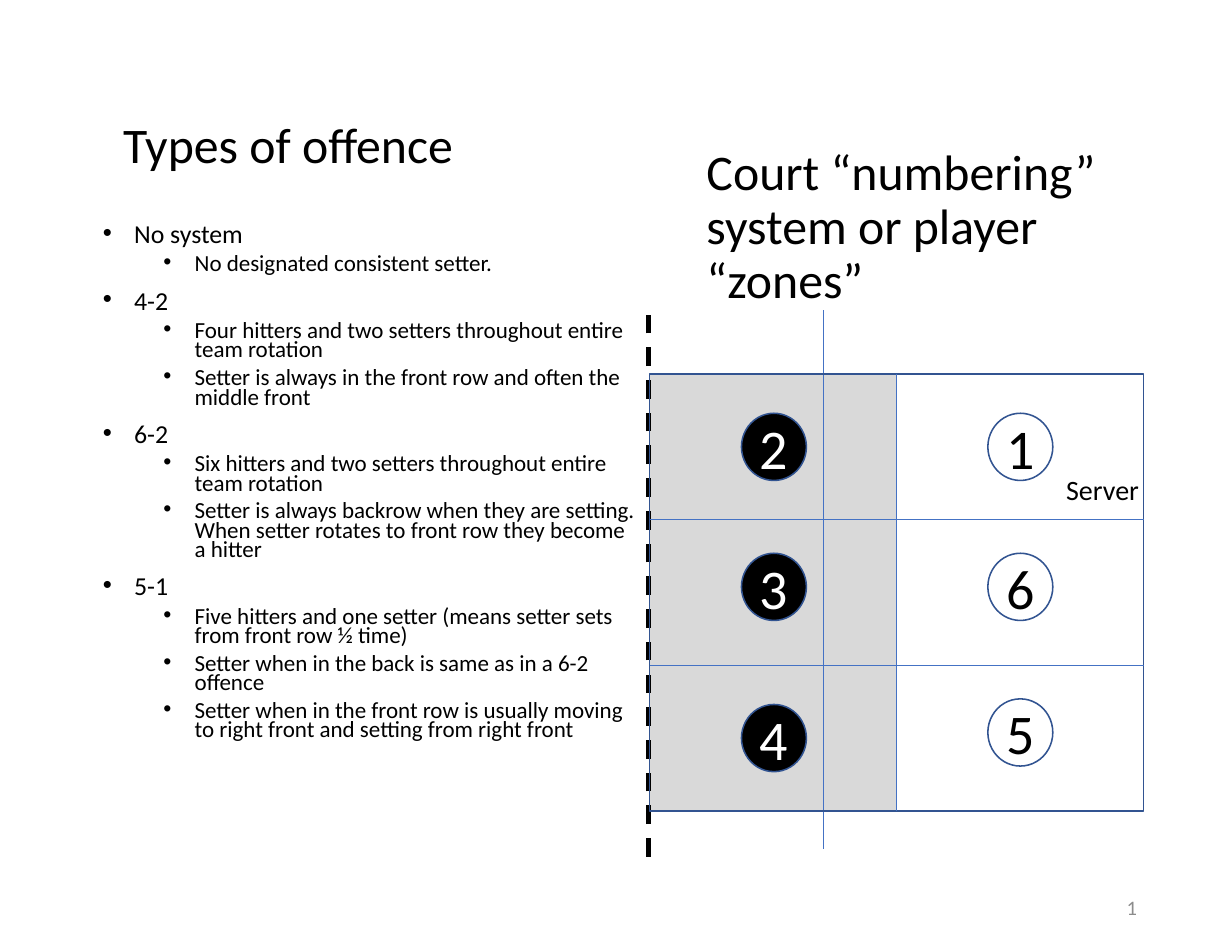
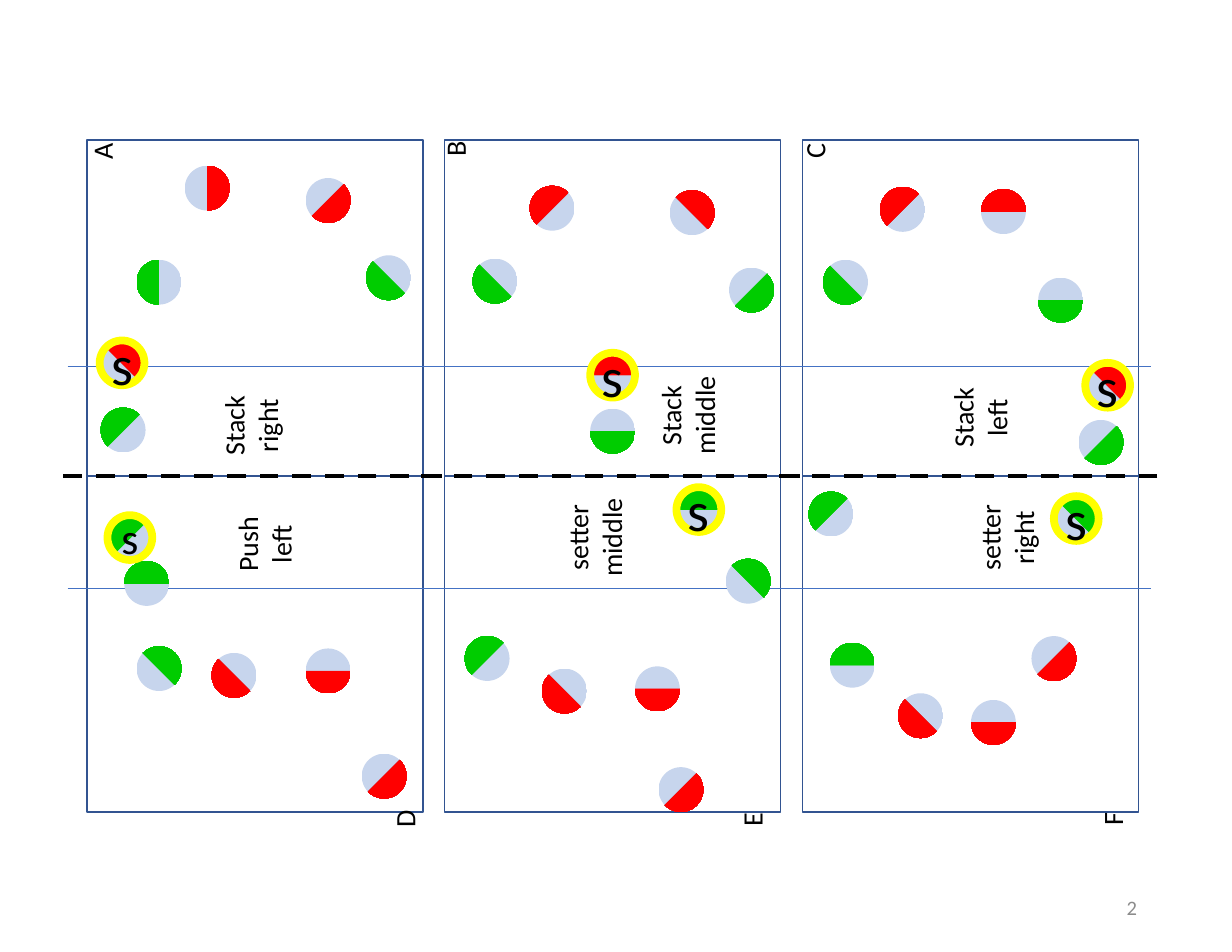
import pptx
import pptx.dml.color
import pptx.enum.dml
import pptx.enum.shapes
import pptx.enum.text
import pptx.oxml
import pptx.util
from lxml import etree

ALIGN = pptx.enum.text.PP_ALIGN
ANCHOR = pptx.enum.text.MSO_ANCHOR
SHAPE = pptx.enum.shapes.MSO_SHAPE
TITLE_ONLY, BLANK = 5, 6
COLUMNS, ROWS = 110, 85

BLACK, WHITE, GREY = "000000", "FFFFFF", "8C8C8C"
OUTLINE, COURT_LINE, FRONT_ROW = "325491", "4472C4", "D9D9D9"
RED, GREEN, PALE, SETTER_RING = "FF0000", "00CC00", "C7D5ED", "FFFF00"

RIGHT, LOW_RIGHT, DOWN, LOW_LEFT, LEFT, UP_LEFT, UP, UP_RIGHT = range(0, 360, 45)

OFFENCES = [
    ("No system", ["No designated consistent setter."]),
    ("4-2", ["Four hitters and two setters throughout entire team rotation",
             "Setter is always in the front row and often the middle front"]),
    ("6-2", ["Six hitters and two setters throughout entire team rotation",
             "Setter is always backrow when they are setting. When setter rotates "
             "to front row they become a hitter"]),
    ("5-1", ["Five hitters and one setter (means setter sets from front row ½ time)",
             "Setter when in the back is same as in a 6-2 offence",
             "Setter when in the front row is usually moving to right front and "
             "setting from right front"]),
]

PLAYERS = [
    (32.7, 22.8, GREEN, LOW_LEFT), (12.2, 23.2, GREEN, LEFT), (9, 36.4, GREEN, UP_LEFT),
    (27.3, 15.9, RED, LOW_RIGHT), (16.5, 14.8, RED, RIGHT),
    (47.3, 16.6, RED, UP_LEFT), (65.1, 23.9, GREEN, LOW_RIGHT), (52.7, 36.5, GREEN, DOWN),
    (42.2, 23.1, GREEN, LOW_LEFT), (59.8, 17, RED, UP_RIGHT),
    (78.6, 16.7, RED, UP_LEFT), (96.3, 37.5, GREEN, LOW_RIGHT), (92.7, 24.8, GREEN, DOWN),
    (73.5, 23.2, GREEN, LOW_LEFT), (87.6, 16.9, RED, UP),
    (32.3, 67.3, RED, LOW_RIGHT), (11.1, 50.1, GREEN, UP), (12.2, 57.7, GREEN, UP_RIGHT),
    (18.9, 58.3, RED, LOW_LEFT), (27.3, 57.9, RED, DOWN),
    (58.8, 68.5, RED, LOW_RIGHT), (64.8, 49.9, GREEN, UP_RIGHT), (48.4, 59.7, RED, LOW_LEFT),
    (56.7, 59.5, RED, DOWN), (41.5, 56.8, GREEN, UP_LEFT),
    (92.1, 56.8, RED, LOW_RIGHT), (72.2, 43.9, GREEN, UP_LEFT), (80.2, 61.9, RED, LOW_LEFT),
    (86.7, 62.5, RED, DOWN), (74.1, 57.4, GREEN, UP),
]
SETTERS = [
    (8.9, 30.4, RED, UP_RIGHT, 36), (52.7, 31.5, RED, UP, 36), (96.9, 32.4, RED, UP_RIGHT, 36),
    (9.6, 46, GREEN, UP_LEFT, 28), (60.4, 43.5, GREEN, UP, 36), (94.1, 44.3, GREEN, UP_RIGHT, 36),
]
CAPTIONS = [
    ("Stack right", 17.5, 34.1), ("Stack middle", 56.5, 33.2), ("Stack left", 82.6, 33.4),
    ("Push left", 18.7, 44.7), ("setter middle", 48.2, 44.1), ("setter right", 85, 44.1),
]
LETTERS = [
    ("A", 7.1, 12.6, 2.6), ("B", 38.6, 12.5, 2.5), ("C", 70.7, 12.6, 2.5),
    ("D", 34.1, 72.2, 2.7), ("E", 65.1, 72.4, 2.4), ("F", 97.3, 72.4, 2.3),
]


def rgb(code):
    return pptx.dml.color.RGBColor.from_string(code)


class Deck:
    font = "Calibri"

    def __init__(self):
        self.show = pptx.Presentation()
        self.show.slide_width = pptx.util.Inches(11)
        self.show.slide_height = pptx.util.Inches(8.5)
        self.slide = None

    def new_slide(self, layout):
        self.slide = self.show.slides.add_slide(self.show.slide_layouts[layout])
        self.text(str(len(self.show.slides)), (77.7, 78.8, 24.8, 4.5), 13.2, GREY,
                  ALIGN.RIGHT, ANCHOR.MIDDLE)

    def grid(self, *lengths):
        units = self.show.slide_width / COLUMNS, self.show.slide_height / ROWS
        return [round(length * units[i % 2]) for i, length in enumerate(lengths)]

    def style(self, paragraph, size, color=BLACK, align=ALIGN.LEFT):
        paragraph.alignment = align
        paragraph.font.size = pptx.util.Pt(size)
        paragraph.font.name = self.font
        paragraph.font.color.rgb = rgb(color)

    def fill_frame(self, frame, words, size, color=BLACK, align=ALIGN.LEFT,
                   anchor=ANCHOR.TOP, wrap=True):
        frame.text = words
        frame.word_wrap = wrap
        frame.auto_size = pptx.enum.text.MSO_AUTO_SIZE.NONE
        frame.vertical_anchor = anchor
        self.style(frame.paragraphs[0], size, color, align)

    def text(self, words, box, *look, **more):
        holder = self.slide.shapes.add_textbox(*self.grid(*box))
        self.fill_frame(holder.text_frame, words, *look, **more)
        return holder

    def heading(self, words, box, holder=None):
        if holder is None:
            holder = self.slide.shapes.add_textbox(0, 0, 0, 0)
        holder.left, holder.top, holder.width, holder.height = self.grid(*box)
        self.fill_frame(holder.text_frame, words, 32, anchor=ANCHOR.MIDDLE)
        holder.text_frame.paragraphs[0].line_spacing = 0.9

    def outline(self, groups, box):
        frame = self.slide.shapes.add_textbox(*self.grid(*box)).text_frame
        frame.word_wrap = True
        lines = [line for topic, points in groups
                 for line in [(topic, 0)] + [(point, 1) for point in points]]
        for i, (words, level) in enumerate(lines):
            paragraph = frame.add_paragraph() if i else frame.paragraphs[0]
            paragraph.text = words
            paragraph.level = level
            paragraph.line_spacing = 0.7
            paragraph.space_before = pptx.util.Pt((11, 5.5)[level])
            properties = paragraph._p.get_or_add_pPr()
            properties.set("marL", str(pptx.util.Inches((0.28, 0.82)[level])))
            properties.set("indent", str(pptx.util.Inches(-0.28)))
            for tag, key, value in (("a:buFont", "typeface", "Arial"), ("a:buChar", "char", "•")):
                etree.SubElement(properties, pptx.oxml.ns.qn(tag)).set(key, value)
            self.style(paragraph, (16.6, 14.8)[level])

    def shape(self, kind, box, fill=None, line=None, width=1):
        form = self.slide.shapes.add_shape(kind, *self.grid(*box))
        form.shadow.inherit = False
        if fill:
            form.fill.solid()
            form.fill.fore_color.rgb = rgb(fill)
        else:
            form.fill.background()
        if line:
            form.line.color.rgb = rgb(line)
            form.line.width = pptx.util.Pt(width)
        else:
            form.line.fill.background()
        return form

    def mark(self, form, words, size, color=BLACK):
        frame = form.text_frame
        frame.margin_left = frame.margin_right = frame.margin_top = frame.margin_bottom = 0
        self.fill_frame(frame, words, size, color, ALIGN.CENTER, ANCHOR.MIDDLE, wrap=False)

    def player(self, column, row, team, facing, ring=None):
        disc = self.shape(SHAPE.OVAL, (column, row, 4, 4), line=ring, width=5)
        disc.fill.gradient()
        disc.fill.gradient_angle = -facing % 360
        for stop, color, position in zip(disc.fill.gradient_stops, (PALE, team), (0.49, 0.5)):
            stop.color.rgb = rgb(color)
            stop.position = position
        return disc

    def line(self, *ends, color=COURT_LINE, width=0.5, dashed=False):
        straight = pptx.enum.shapes.MSO_CONNECTOR.STRAIGHT
        stroke = self.slide.shapes.add_connector(straight, *self.grid(*ends))
        stroke.line.color.rgb = rgb(color)
        stroke.line.width = pptx.util.Pt(width)
        if dashed:
            stroke.line.dash_style = pptx.enum.dml.MSO_LINE.DASH
        etree.SubElement(stroke._element.spPr, pptx.oxml.ns.qn("a:effectLst"))
        return stroke

    def net(self, *ends):
        self.line(*ends, color=BLACK, width=3, dashed=True)


def offence_slide(deck):
    deck.new_slide(TITLE_ONLY)
    deck.heading("Types of offence", (10, 5.9, 42.6, 14.5), deck.slide.shapes.title)
    deck.outline(OFFENCES, (8.2, 19.7, 49.6, 52.8))

    left, top, width, zone = 58, 33.4, 44.1, 13
    right, bottom = left + width, top + 3 * zone
    for i in range(3):
        deck.shape(SHAPE.RECTANGLE, (left, top + i * zone, width / 2, zone), FRONT_ROW)
    deck.text("Server", (93.6, 41.7, 9.7, 4.4), 18, align=ALIGN.CENTER)
    for column, fill, ink, zones in (
            (66.2, BLACK, WHITE, (("2", 36.9), ("3", 49.4), ("4", 62.9))),
            (88.2, WHITE, BLACK, (("1", 36.9), ("6", 49.4), ("5", 62.4)))):
        for number, row in zones:
            spot = deck.shape(SHAPE.OVAL, (column, row, 5.8, 6), fill, OUTLINE)
            deck.mark(spot, number, 36, ink)
    deck.net(57.9, 76.5, 57.9, 27.9)
    deck.line(73.5, 27.7, 73.5, 75.8)
    court = deck.shape(SHAPE.RECTANGLE, (left, top, width, 3 * zone), line=OUTLINE)
    for i in (1, 2):
        deck.line(left, top + i * zone, right, top + i * zone)
    middle = left + width / 2
    halfway = deck.line(middle, top, middle, bottom)
    halfway.begin_connect(court, 0)
    halfway.end_connect(court, 2)
    deck.heading("Court “numbering” system or player “zones”", (62.1, 9, 40, 22.8))


def formations_slide(deck):
    deck.new_slide(BLANK)
    side, top = 30, 12.5
    net_row = top + side
    for i in range(3):
        left = 7.75 + 31.95 * i
        for row in (top, net_row):
            deck.shape(SHAPE.RECTANGLE, (left, row, side, side), line=OUTLINE)
        deck.net(left + 31.7, net_row, left - 2.8, net_row)
        for row in (32.7, 52.5):
            deck.line(left - 1.7, row, left + 31.1, row)
    for place in PLAYERS:
        deck.player(*place)
    for *place, size in SETTERS:
        deck.mark(deck.player(*place, ring=SETTER_RING), "s", size)
    for words, column, row in CAPTIONS:
        deck.text(words, (column, row, 10.5, 7.8), 18, align=ALIGN.CENTER).rotation = 270
    for letter, column, row, height in LETTERS:
        label = deck.text(letter, (column, row, 5.4, height), 18, wrap=False)
        label.text_frame._txBody.bodyPr.set("vert", "vert270")


def main():
    deck = Deck()
    offence_slide(deck)
    formations_slide(deck)
    deck.show.save("out.pptx")


if __name__ == "__main__":
    main()
